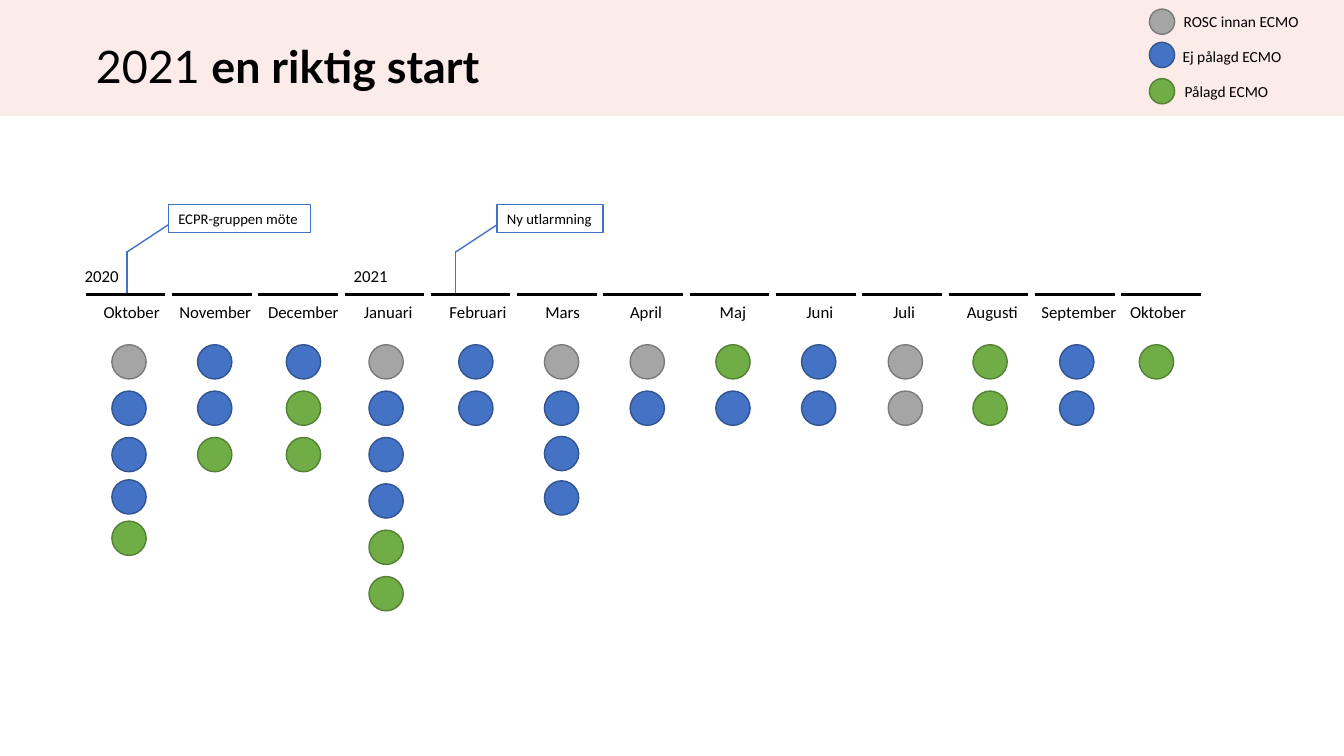
from dataclasses import dataclass

from lxml import etree
from pptx import Presentation
from pptx.dml.color import RGBColor
from pptx.enum.shapes import MSO_CONNECTOR, MSO_SHAPE
from pptx.enum.text import MSO_ANCHOR, MSO_AUTO_SIZE, PP_ALIGN
from pptx.oxml.ns import qn
from pptx.util import Inches, Pt

RECT, OVAL, STRAIGHT = MSO_SHAPE.RECTANGLE, MSO_SHAPE.OVAL, MSO_CONNECTOR.STRAIGHT
MIDDLE, LEFT, FIT = MSO_ANCHOR.MIDDLE, PP_ALIGN.LEFT, MSO_AUTO_SIZE.SHAPE_TO_FIT_TEXT


@dataclass(frozen=True)
class Theme:
    band = RGBColor.from_string("FBEBE9")
    black = RGBColor.from_string("000000")
    white = RGBColor.from_string("FFFFFF")
    grey = RGBColor.from_string("A5A5A5")
    grey_edge = RGBColor.from_string("7A7A7A")
    blue = RGBColor.from_string("4472C4")
    blue_edge = RGBColor.from_string("325491")
    green = RGBColor.from_string("70AD47")
    green_edge = RGBColor.from_string("538035")
    title_font, body_font = "Lato", "Calibri"
    title_size, month_size, legend_size, callout_size = Pt(32), Pt(12), Pt(11), Pt(10.5)
    axis_width, thin_width = Pt(2.25), Pt(1)


T = Theme()

# R = ROSC before ECMO, E = not put on ECMO, P = put on ECMO
OUTCOMES = {"R": (T.grey, T.grey_edge), "E": (T.blue, T.blue_edge),
            "P": (T.green, T.green_edge)}

# month, label left, label width, dot left, outcomes from top to bottom
MONTHS = [
    ("Oktober", 0.93, 0.76, 1.11, "REEEP"),
    ("November", 1.68, 0.92, 1.96, "EEP"),
    ("December", 2.56, 0.91, 2.84, "EPP"),
    ("Januari", 3.51, 0.69, 3.66, "REEEPP"),
    ("Februari", 4.36, 0.77, 4.55, "EE"),
    ("Mars", 5.31, 0.55, 5.4, "REEE"),
    ("April", 6.15, 0.52, 6.25, "RE"),
    ("Maj", 7.04, 0.47, 7.1, "PE"),
    ("Juni", 7.9, 0.47, 7.95, "EE"),
    ("Juli", 8.76, 0.42, 8.81, "RR"),
    ("Augusti", 9.49, 0.71, 9.65, "PP"),
    ("September", 10.23, 0.95, 10.51, "EE"),
    ("Oktober", 11.11, 0.76, 11.3, "P"),
]
DOT_TOP, DOT_PITCH, DOT_SIZE = 3.42, 0.46, 0.34
# dots that sit closer than the regular pitch: (column, row) -> top
TIGHT_DOTS = {(0, 3): 4.76, (0, 4): 5.17, (5, 2): 4.33, (5, 3): 4.77}
AXIS_Y, AXIS_LEFT, AXIS_LAST = 2.92, 0.85, 11.12
AXIS_PITCH = (AXIS_LAST - AXIS_LEFT) / (len(MONTHS) - 1)
SEGMENT = 0.79

prs = Presentation()
prs.slide_width, prs.slide_height = Inches(13.33), Inches(7.5)
slide = prs.slides.add_slide(prs.slide_layouts[5])
shapes = slide.shapes


def add_box(kind, x, y, w, h, fill=None, edge=None, text=None, size=None):
    """Add a shape, or a text box if kind is None, with optional label."""
    box = [Inches(v) for v in (x, y, w, h)]
    if kind is None:
        sp = shapes.add_textbox(*box)
    else:
        sp = shapes.add_shape(kind, *box)
        sp.shadow.inherit = False
        sp.fill.solid()
        sp.fill.fore_color.rgb = fill
        if edge is None:
            sp.line.fill.background()
        else:
            sp.line.color.rgb = edge
            sp.line.width = T.thin_width
    if text:
        tf = sp.text_frame
        tf.text = text
        tf.word_wrap = False
        tf.auto_size = FIT
        p = tf.paragraphs[0]
        p.alignment = LEFT
        font = p.runs[0].font
        font.name, font.size, font.color.rgb = T.body_font, size, T.black
    return sp


def add_line(x1, y1, x2, y2, color, width):
    line = shapes.add_connector(STRAIGHT, *[Inches(v) for v in (x1, y1, x2, y2)])
    line.line.color.rgb = color
    line.line.width = width
    etree.SubElement(line._element.spPr, qn("a:effectLst"))


# Title on its band
band = add_box(RECT, 0, 0, 13.33, 1.15, T.band)
title = shapes.title
band._element.addnext(title._element)
title.left, title.top = Inches(0.85), Inches(-0.04)
title.width, title.height = Inches(11.03), Inches(1.45)
tf = title.text_frame
tf.word_wrap = True
tf.vertical_anchor = MIDDLE
p = tf.paragraphs[0]
p.alignment = LEFT
p.line_spacing = 0.9
for text, bold in (("2021 ", False), ("en riktig start", True)):
    r = p.add_run()
    r.text = text
    r.font.name, r.font.size, r.font.bold = T.title_font, T.title_size, bold
    r.font.color.rgb = T.black

# Timeline with one column of outcomes per month
for col, (month, label_x, label_w, dot_x, outcomes) in enumerate(MONTHS):
    x = AXIS_LEFT + col * AXIS_PITCH
    add_line(x, AXIS_Y, x + SEGMENT, AXIS_Y, T.black, T.axis_width)
    add_box(None, label_x, 2.94, label_w, 0.3, text=month, size=T.month_size)
    for row, outcome in enumerate(outcomes):
        y = TIGHT_DOTS.get((col, row), DOT_TOP + row * DOT_PITCH)
        add_box(OVAL, dot_x, y, DOT_SIZE, DOT_SIZE, *OUTCOMES[outcome])

for year, x in (("2020", 0.74), ("2021", 3.41)):
    add_box(None, x, 2.59, 0.55, 0.3, text=year, size=T.month_size)

# Callouts
for text, x, w in (("ECPR-gruppen möte", 1.26, 1.41), ("Ny utlarmning", 4.52, 1.05)):
    add_line(x, 2.5, x + 0.44, 2.21, T.blue, T.thin_width)
    add_box(RECT, x + 0.41, 2.03, w, 0.28, T.white, T.blue, text, T.callout_size)
    add_line(x, 2.49, x, 2.91, T.blue, T.thin_width)

# Legend
for text, outcome, dot_y, x, y, w in (
    ("ROSC innan ECMO", "R", 0.09, 11.64, 0.07, 1.35),
    ("Ej pålagd ECMO", "E", 0.42, 11.63, 0.42, 1.19),
    ("Pålagd ECMO", "P", 0.78, 11.65, 0.77, 1.04),
):
    add_box(OVAL, 11.4, dot_y, 0.25, 0.25, *OUTCOMES[outcome])
    add_box(None, x, y, w, 0.29, text=text, size=T.legend_size)

prs.save("out.pptx")
